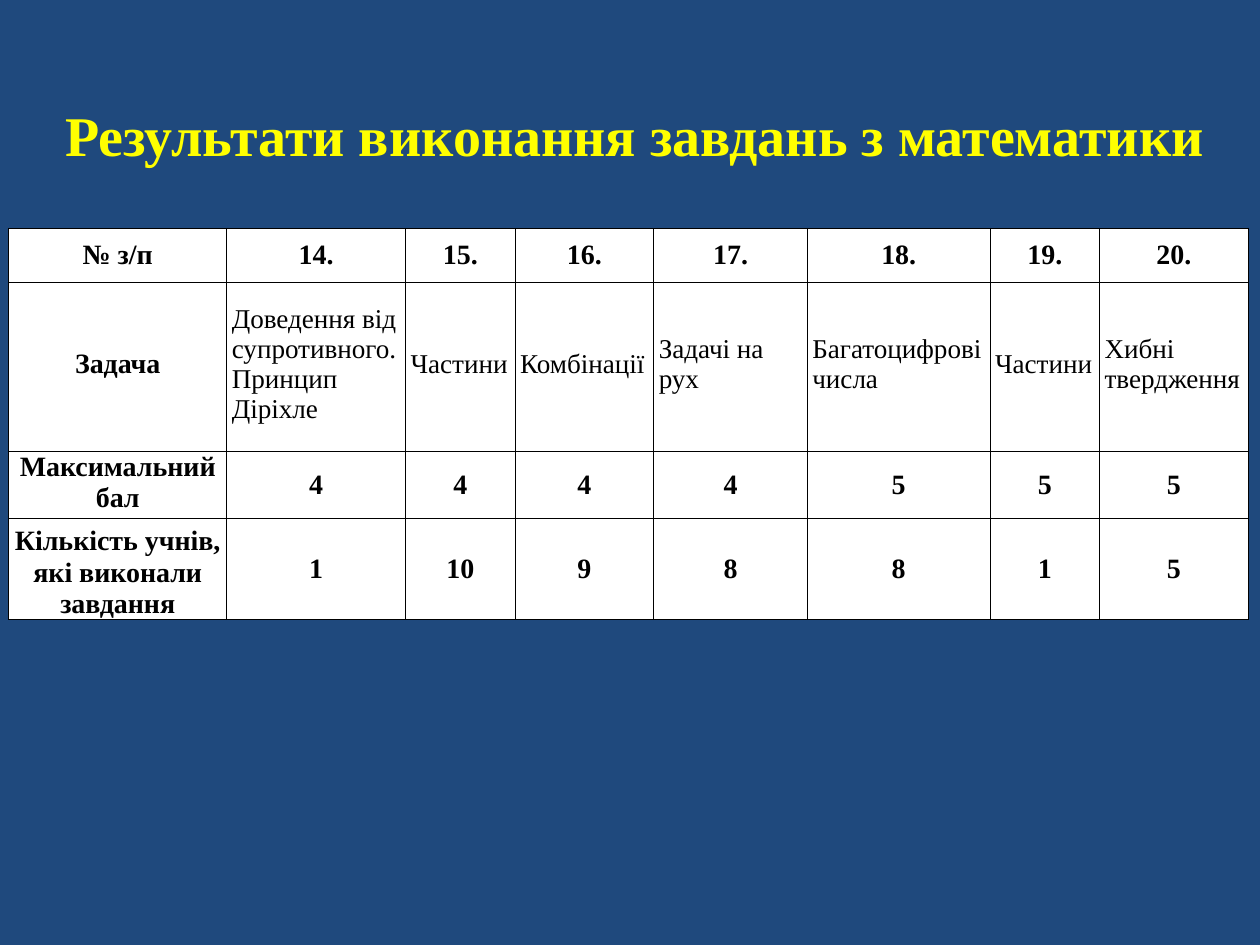
from dataclasses import dataclass

from lxml.etree import SubElement as Sub
from pptx import Presentation
from pptx.dml.color import RGBColor as RGB
from pptx.enum.text import MSO_ANCHOR as Anchor, MSO_AUTO_SIZE as Fit, PP_ALIGN as Align
from pptx.oxml.ns import qn
from pptx.util import Pt

FONT = "Times New Roman"
COLORS = {"back": "1F497D", "title": "FFFF00", "ink": "000000", "cell": "FFFFFF"}


@dataclass(frozen=True)
class Style:
    size: float = 16
    bold: bool = True
    align: Align = Align.CENTER
    anchor: Anchor = Anchor.MIDDLE
    side: float = 0
    foot: float = 0


@dataclass(frozen=True)
class Row:
    height: float
    texts: list[str]
    head: Style = Style()
    body: Style = Style()


COLS = [124.6, 102.2, 62.6, 79.2, 87.8, 104.4, 62.6, 85]
ROWS = [
    Row(31, ["№ з/п"] + [f"{n}." for n in range(14, 21)]),
    Row(96.5,
        ["Задача", "Доведення від супротивного. Принцип Діріхле", "Частини",
         "Комбінації", "Задачі на рух", "Багатоцифрові числа", "Частини",
         "Хибні твердження"],
        Style(foot=2.9),
        Style(15.5, False, Align.LEFT, side=2.9, foot=2.9)),
    Row(15.1, ["Максимальний бал", *"4444555"],
        Style(anchor=Anchor.TOP, side=2.9)),
    Row(35.3, ["Кількість учнів, які виконали завдання",
               "1", "10", "9", "8", "8", "1", "5"],
        Style(anchor=Anchor.BOTTOM, side=2.9)),
]


def assign(obj, values: dict) -> None:
    for name, value in values.items():
        setattr(obj, name, value)


def color(name: str) -> RGB:
    return RGB.from_string(COLORS[name])


def write(frame, text: str, size: float, bold: bool, align: Align, ink: str) -> None:
    para = frame.paragraphs[0]
    para.alignment = align
    run = para.add_run()
    run.text = text
    assign(run.font, {"name": FONT, "size": Pt(size), "bold": bold})
    run.font.color.rgb = color(ink)


def border(cell) -> None:
    props = cell._tc.get_or_add_tcPr()
    for side in ("lnL", "lnR", "lnT", "lnB"):
        line = Sub(props, qn(f"a:{side}"), w=str(Pt(0.5)))
        fill = Sub(line, qn("a:solidFill"))
        Sub(fill, qn("a:srgbClr"), val=COLORS["ink"])


def draw_cell(cell, text: str, style: Style) -> None:
    border(cell)
    cell.fill.solid()
    cell.fill.fore_color.rgb = color("cell")
    assign(cell, {
        "vertical_anchor": style.anchor,
        "margin_left": Pt(style.side), "margin_right": Pt(style.side),
        "margin_top": Pt(0), "margin_bottom": Pt(style.foot),
    })
    write(cell.text_frame, text, style.size, style.bold, style.align, "ink")


def draw_table(slide) -> None:
    shape = slide.shapes.add_table(len(ROWS), len(COLS), Pt(5), Pt(130.4),
                                   Pt(sum(COLS)), Pt(223.2))
    table = shape.table
    assign(table, {"first_row": False, "horz_banding": False})
    for col, width in zip(table.columns, COLS):
        col.width = Pt(width)
    for line, row in zip(table.rows, ROWS):
        line.height = Pt(row.height)
        for i, (cell, text) in enumerate(zip(line.cells, row.texts)):
            draw_cell(cell, text, row.body if i else row.head)
    # Room for the rows that grow with their text
    shape.height = Pt(223.2)


def draw_title(slide) -> None:
    title = slide.shapes.title
    assign(title, {"left": Pt(30), "top": Pt(54), "width": Pt(672), "height": Pt(46)})
    frame = title.text_frame
    assign(frame, {"word_wrap": False, "auto_size": Fit.SHAPE_TO_FIT_TEXT,
                   "vertical_anchor": Anchor.TOP})
    write(frame, "Результати виконання завдань з математики", 32, True,
          Align.LEFT, "title")


def main() -> None:
    deck = Presentation()
    assign(deck, {"slide_width": Pt(720), "slide_height": Pt(540)})
    slide = deck.slides.add_slide(deck.slide_layouts[5])
    # Background
    back = slide.background.fill
    back.solid()
    back.fore_color.rgb = color("back")
    # Content
    draw_title(slide)
    draw_table(slide)
    deck.save("out.pptx")


if __name__ == "__main__":
    main()
